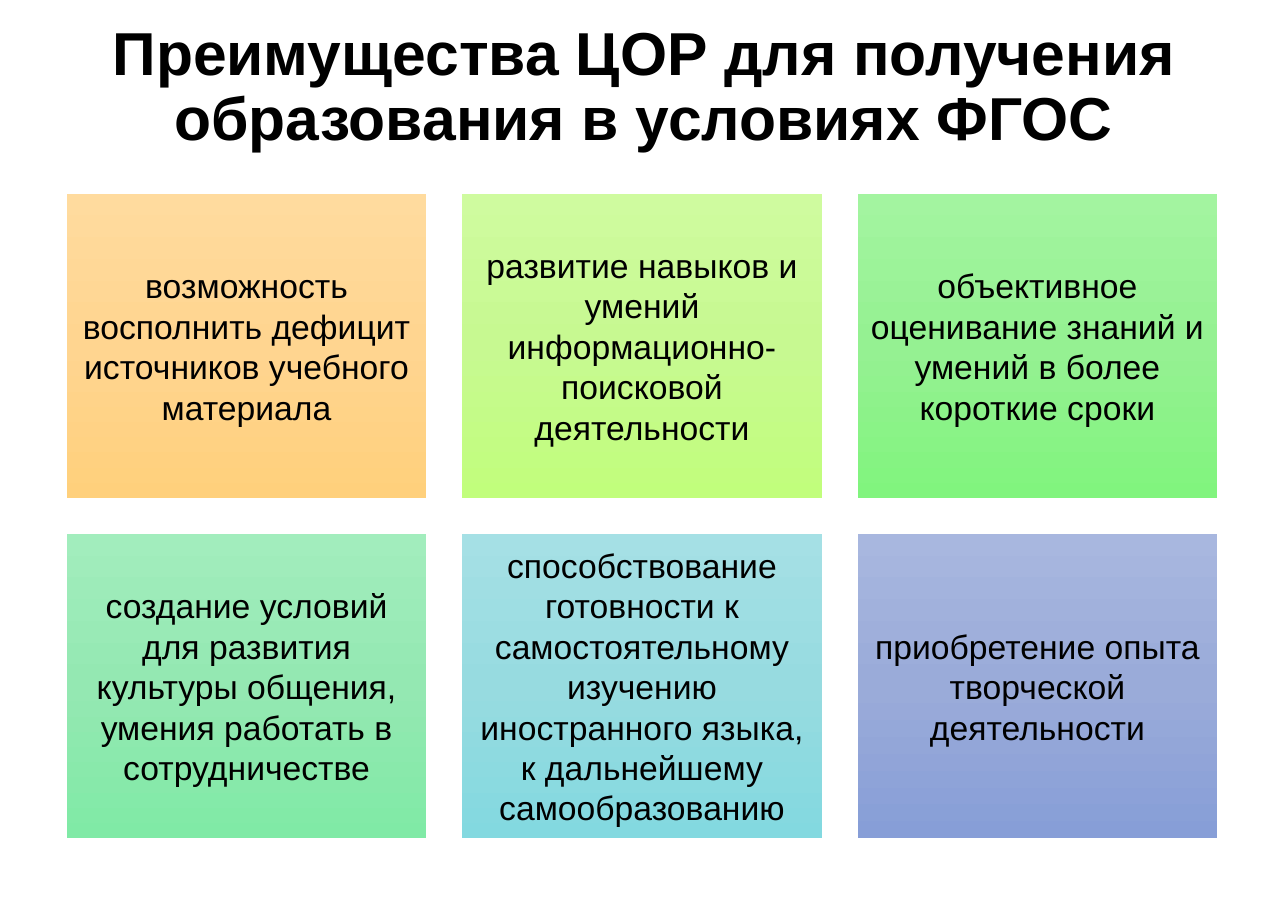
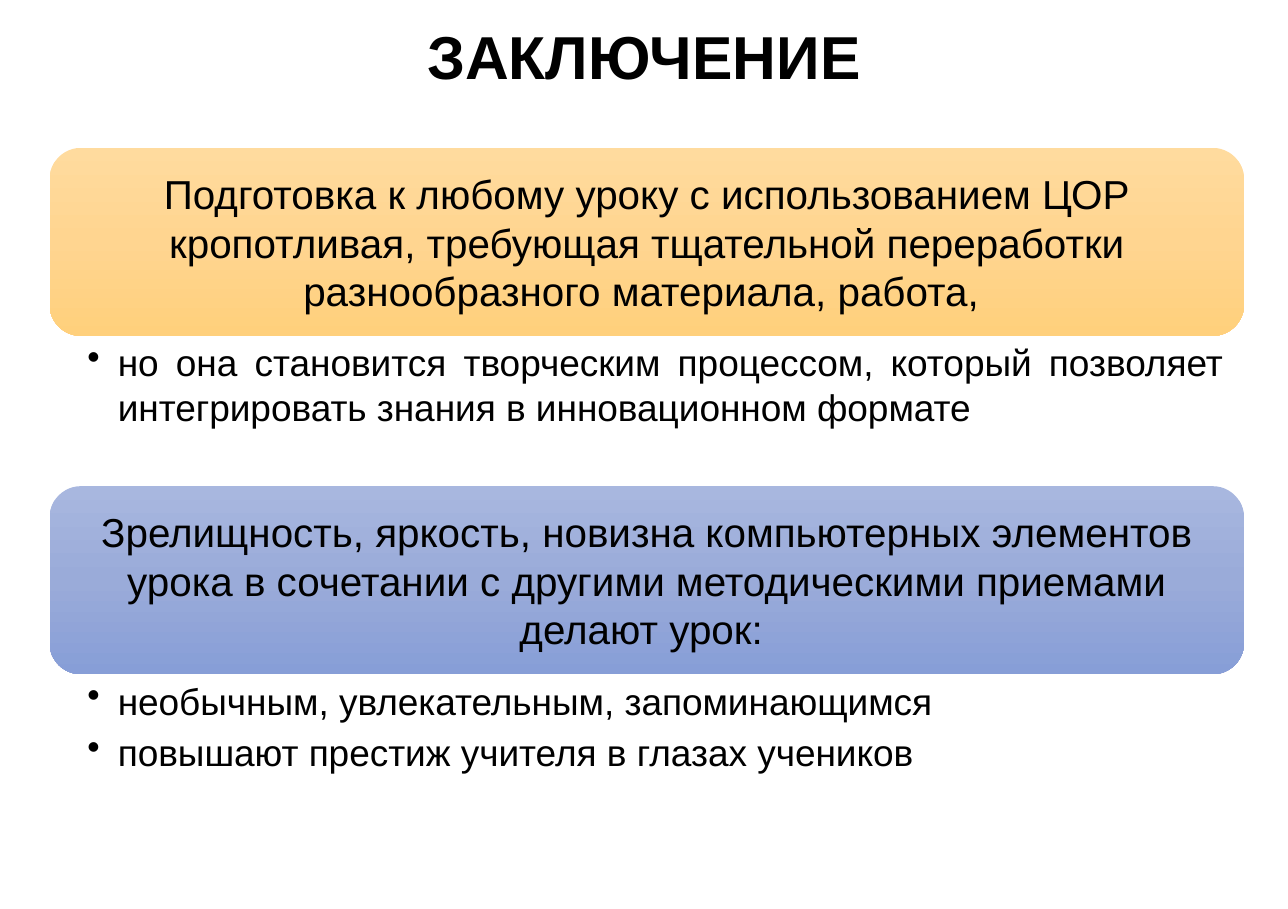
from copy import deepcopy
from dataclasses import dataclass

from lxml import etree
from pptx import Presentation
from pptx.dml.color import RGBColor
from pptx.enum import shapes, text
from pptx.oxml.ns import qn
from pptx.util import Cm, Pt


@dataclass(frozen=True)
class Theme:
    font: str = "Arial"
    ink: str = "000000"
    title_size: int = 36
    card_size: int = 20
    banner_size: int = 24
    bullet_size: int = 22
    orange: tuple = ("FFDB9E", "FFD590", "FFD07C")
    lime: tuple = ("CFFB9F", "C7F991", "C1FE7C")
    green: tuple = ("A3F4A0", "95F192", "81F47E")
    mint: tuple = ("A2EDBD", "94E8B2", "80EAA6")
    teal: tuple = ("A5E0E5", "97DBE0", "83D9E0")
    blue: tuple = ("A8B7DF", "9AABD9", "879ED7")


THEME = Theme()
SLIDE_WIDTH, SLIDE_HEIGHT = 27, 19.05

BENEFITS_TITLE = "Преимущества ЦОР для получения образования в условиях ФГОС"
BENEFITS = [
    ("возможность восполнить дефицит источников учебного материала", THEME.orange),
    ("развитие навыков и умений информационно-поисковой деятельности", THEME.lime),
    ("объективное оценивание знаний и умений в более короткие сроки", THEME.green),
    ("создание условий для развития культуры общения, умения работать в сотрудничестве",
     THEME.mint),
    ("способствование готовности к самостоятельному изучению иностранного языка, "
     "к дальнейшему самообразованию", THEME.teal),
    ("приобретение опыта творческой деятельности", THEME.blue),
]

CONCLUSION_TITLE = "ЗАКЛЮЧЕНИЕ"
CONCLUSIONS = [
    ("Подготовка к любому уроку с использованием ЦОР кропотливая, требующая "
     "тщательной переработки разнообразного материала, работа, ",
     THEME.orange,
     ["но она становится творческим процессом, который позволяет интегрировать "
      "знания в инновационном формате"]),
    ("Зрелищность, яркость, новизна компьютерных элементов урока в сочетании "
     "с другими методическими приемами делают урок: ",
     THEME.blue,
     ["необычным, увлекательным, запоминающимся",
      "повышают престиж учителя в глазах учеников"]),
]


def apply(target, values):
    for name, value in values.items():
        setattr(target, name, value)


def set_margins(frame, left, top, right, bottom):
    apply(frame, dict(margin_left=Cm(left), margin_top=Cm(top),
                      margin_right=Cm(right), margin_bottom=Cm(bottom)))


def write(paragraph, words, size, alignment=text.PP_ALIGN.CENTER, bold=False):
    run = paragraph.add_run()
    run.text = words
    paragraph.alignment = alignment
    apply(run.font, dict(name=THEME.font, size=Pt(size), bold=bold))
    run.font.color.rgb = RGBColor.from_string(THEME.ink)


def add_title(slide, words, height):
    box = slide.shapes.add_textbox(0, 0, Cm(SLIDE_WIDTH), Cm(height))
    apply(box.text_frame, dict(word_wrap=True, vertical_anchor=text.MSO_ANCHOR.MIDDLE))
    paragraph = box.text_frame.paragraphs[0]
    paragraph.line_spacing = 0.9
    write(paragraph, words, THEME.title_size, bold=True)


def fill_downwards(shape, colours):
    """Fill with evenly spaced gradient stops, first colour at the top."""
    shape.fill.gradient()
    shape.fill.gradient_angle = 270
    stop_list = shape._element.spPr.find(qn("a:gradFill")).find(qn("a:gsLst"))
    while len(stop_list) < len(colours):
        stop_list.append(deepcopy(stop_list[0]))
    for index, (stop, colour) in enumerate(zip(shape.fill.gradient_stops, colours)):
        stop.position = index / (len(colours) - 1)
        stop.color.rgb = RGBColor.from_string(colour)


def add_card(slide, kind, area, words, colours, size, margin):
    shape = slide.shapes.add_shape(kind, *map(Cm, area))
    shape.shadow.inherit = False
    shape.line.fill.background()
    fill_downwards(shape, colours)
    frame = shape.text_frame
    apply(frame, dict(word_wrap=True, vertical_anchor=text.MSO_ANCHOR.MIDDLE))
    set_margins(frame, *[margin] * 4)
    write(frame.paragraphs[0], words, size)


def add_bullets(slide, area, items):
    frame = slide.shapes.add_textbox(*map(Cm, area)).text_frame
    frame.word_wrap = True
    set_margins(frame, 0.79, 0.08, 0.43, 0.08)
    for index, item in enumerate(items):
        paragraph = frame.add_paragraph() if index else frame.paragraphs[0]
        properties = paragraph._p.get_or_add_pPr()
        properties.set("marL", str(Cm(0.64)))
        properties.set("indent", str(-Cm(0.64)))
        etree.SubElement(properties, qn("a:buChar")).set("char", "•")
        paragraph.space_after = Pt(4.4)
        write(paragraph, item, THEME.bullet_size, text.PP_ALIGN.JUSTIFY)


def build_benefits(slide):
    add_title(slide, BENEFITS_TITLE, 3.7)
    columns, left, top, width, height, gap = 3, 1.4, 4.06, 7.54, 6.38, 0.75
    for index, (words, colours) in enumerate(BENEFITS):
        row, column = divmod(index, columns)
        area = (left + column * (width + gap), top + row * (height + gap), width, height)
        add_card(slide, shapes.MSO_SHAPE.RECTANGLE, area, words, colours,
                 THEME.card_size, 0.2)


def build_conclusion(slide):
    add_title(slide, CONCLUSION_TITLE, 2.5)
    left, top, width, banner_height, list_height = 1.04, 3.1, 25.04, 3.94, 3.15
    for words, colours, items in CONCLUSIONS:
        add_card(slide, shapes.MSO_SHAPE.ROUNDED_RECTANGLE,
                 (left, top, width, banner_height), words, colours,
                 THEME.banner_size, 0.25)
        top += banner_height
        add_bullets(slide, (left, top, width, list_height), items)
        top += list_height


def main():
    presentation = Presentation()
    apply(presentation, dict(slide_width=Cm(SLIDE_WIDTH), slide_height=Cm(SLIDE_HEIGHT)))
    blank = presentation.slide_layouts[6]
    for build in (build_benefits, build_conclusion):
        build(presentation.slides.add_slide(blank))
    presentation.save("out.pptx")


if __name__ == "__main__":
    main()
